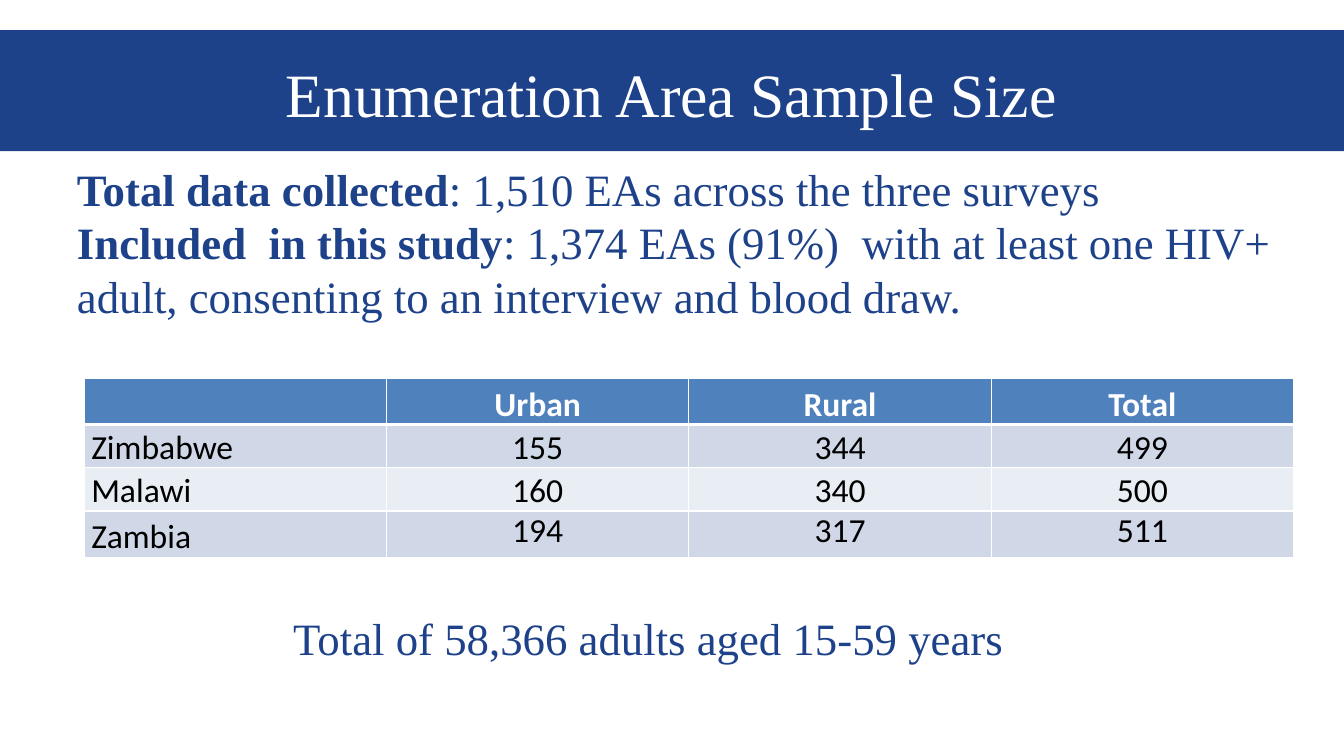
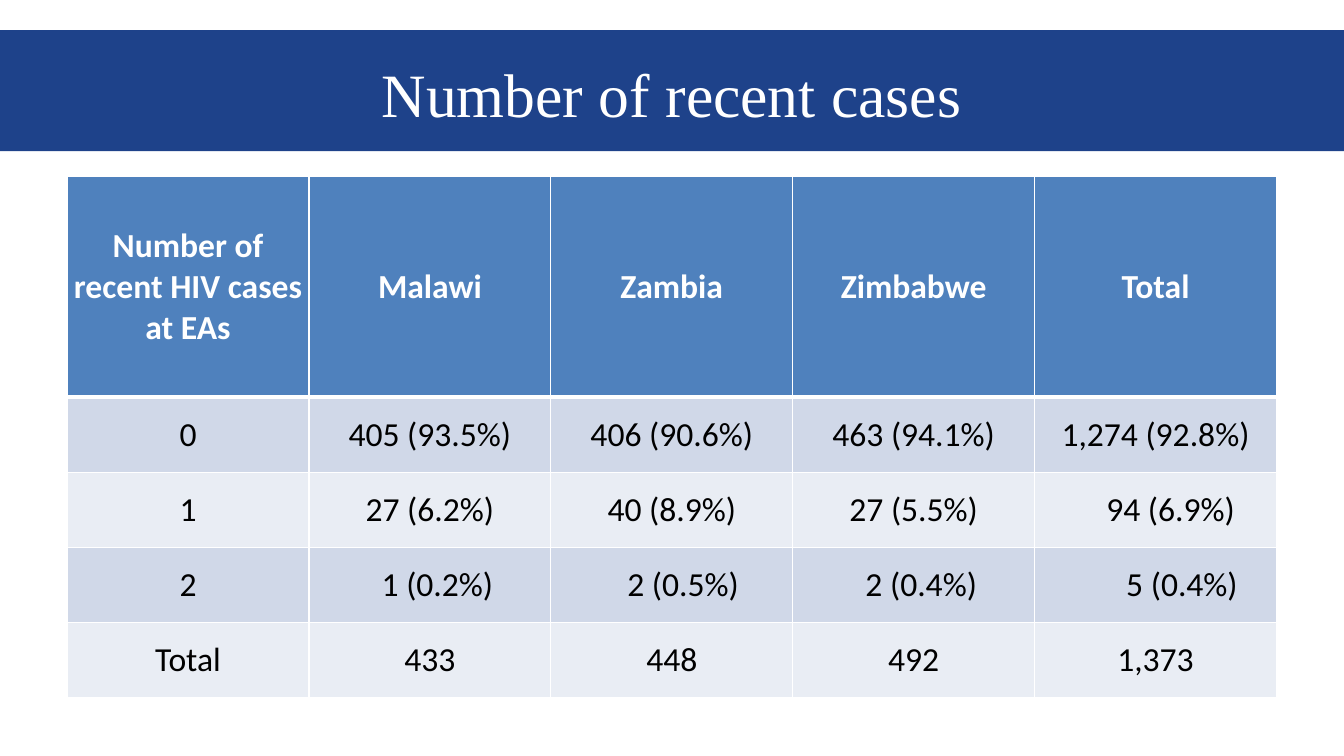
from dataclasses import dataclass

from lxml.etree import SubElement
from pptx import Presentation
from pptx.dml.color import RGBColor
from pptx.enum.shapes import MSO_SHAPE
from pptx.enum.text import MSO_ANCHOR, MSO_AUTO_SIZE, PP_ALIGN
from pptx.oxml.ns import qn
from pptx.util import Cm, Pt


@dataclass(frozen=True)
class Theme:
    """Colours, fonts and type sizes shared by the slides."""

    navy: str = "1E428A"
    white: str = "FFFFFF"
    black: str = "000000"
    header: str = "4F81BD"
    bands: tuple = ("D0D8E8", "E9EDF4")
    serif: str = "Times New Roman"
    sans: str = "Calibri"
    title_size: int = 44
    body_size: int = 32
    table_size: int = 24


@dataclass(frozen=True)
class Box:
    """A region of a slide in centimetres."""

    left: float
    top: float
    width: float
    height: float

    def lengths(self):
        """Return the position and size as lengths."""
        return [Cm(value) for value in (self.left, self.top, self.width, self.height)]


THEME = Theme()
SLIDE_WIDTH, SLIDE_HEIGHT = 33.87, 19.05
BAND = Box(0, 0.76, SLIDE_WIDTH, 3.05)
TITLE = Box(1.69, 0.76, 30.48, 3.18)
SPACE_WIDTH = 0.19


def apply_format(target, **values):
    """Set each named attribute on the target."""
    for name, value in values.items():
        setattr(target, name, value)


def fill_solid(fill, colour):
    """Give a fill one solid colour."""
    fill.solid()
    fill.fore_color.rgb = RGBColor.from_string(colour)


def add_run(paragraph, text, colour, **font_format):
    """Add a formatted run to a paragraph."""
    run = paragraph.add_run()
    run.text = text
    apply_format(run.font, **font_format)
    run.font.color.rgb = RGBColor.from_string(colour)


def add_text(slide, box, paragraphs, colour, font_format, alignment=PP_ALIGN.LEFT, **frame_format):
    """Add a text box whose paragraphs are lists of text and bold pairs."""
    frame = slide.shapes.add_textbox(*box.lengths()).text_frame
    apply_format(frame, word_wrap=True, **frame_format)
    for index, runs in enumerate(paragraphs):
        paragraph = frame.add_paragraph() if index else frame.paragraphs[0]
        paragraph.alignment = alignment
        for text, bold in runs:
            add_run(paragraph, text, colour, bold=bold, **font_format)


def add_body(slide, box, paragraphs):
    """Add navy body text that sizes its box to fit."""
    add_text(slide, box, paragraphs, THEME.navy,
             {"name": THEME.serif, "size": Pt(THEME.body_size)},
             auto_size=MSO_AUTO_SIZE.SHAPE_TO_FIT_TEXT)


def add_titled_slide(presentation, title):
    """Add a blank slide with the navy band and its title."""
    slide = presentation.slides.add_slide(presentation.slide_layouts[6])
    band = slide.shapes.add_shape(MSO_SHAPE.RECTANGLE, *BAND.lengths())
    band.shadow.inherit = False
    fill_solid(band.fill, THEME.navy)
    band.line.fill.background()
    add_text(slide, TITLE, [[(title, False)]], THEME.white,
             {"name": THEME.serif, "size": Pt(THEME.title_size)},
             PP_ALIGN.CENTER, vertical_anchor=MSO_ANCHOR.MIDDLE)
    return slide


def set_borders(cell, widths):
    """Draw white borders of the given widths in points around a cell."""
    properties = cell._tc.get_or_add_tcPr()
    for position, (side, width) in enumerate(widths.items()):
        line = SubElement(properties, qn(f"a:ln{side}"), w=str(Pt(width)))
        fill = SubElement(line, qn("a:solidFill"))
        SubElement(fill, qn("a:srgbClr"), val=THEME.white)
        properties.insert(position, line)


def style_cell(cell, row, text, margins, line_spacing, alignment, anchor):
    """Fill one cell and set its text, margins and borders."""
    is_header = row == 0
    fill_solid(cell.fill, THEME.header if is_header else THEME.bands[(row - 1) % 2])
    apply_format(cell, vertical_anchor=anchor, **margins)
    set_borders(cell, {"L": 1, "R": 1, "T": 3 if row == 1 else 1, "B": 3 if is_header else 1})
    paragraph = cell.text_frame.paragraphs[0]
    apply_format(paragraph, alignment=alignment, line_spacing=line_spacing)
    if text:
        add_run(paragraph, text, THEME.white if is_header else THEME.black,
                name=THEME.sans, size=Pt(THEME.table_size), bold=is_header)


def add_grid(slide, box, rows, header_height, cell_format):
    """Add a banded table with equal columns and equal body rows."""
    column_count = len(rows[0])
    table = slide.shapes.add_table(len(rows), column_count, *box.lengths()).table
    apply_format(table, first_row=False, horz_banding=False)
    for column in table.columns:
        column.width = Cm(box.width / column_count)
    body_height = (box.height - header_height) / (len(rows) - 1)
    for row, texts in enumerate(rows):
        table.rows[row].height = Cm(body_height if row else header_height)
        for column, text in enumerate(texts):
            style_cell(table.cell(row, column), row, text, **cell_format(row, column))


def sample_format(row, column):
    """Return the cell format of the sample size table."""
    is_label = row > 0 and column == 0
    spacings = (1.15, 1.07, 1.07, 1.15 if is_label else 1.0)
    is_top = row == 3 or (is_label and row == 1)
    return {
        "margins": {"margin_left": Cm(0.18), "margin_right": Cm(0.18),
                    "margin_top": 0, "margin_bottom": 0},
        "line_spacing": spacings[row],
        "alignment": PP_ALIGN.LEFT if is_label else PP_ALIGN.CENTER,
        "anchor": MSO_ANCHOR.TOP if is_top else MSO_ANCHOR.MIDDLE,
    }


def cases_format(row, column):
    """Return the cell format of the recent cases table."""
    indents = {(2, 4): 4, (3, 1): 2, (3, 2): 3, (3, 3): 2, (3, 4): 7}
    indent = indents.get((row, column), 0) * SPACE_WIDTH
    return {
        "margins": {"margin_left": Cm(0.02 + indent), "margin_right": Cm(0.02),
                    "margin_top": Cm(0.02), "margin_bottom": 0},
        "line_spacing": 1.0,
        "alignment": PP_ALIGN.CENTER,
        "anchor": MSO_ANCHOR.MIDDLE,
    }


def build_sample_slide(presentation):
    """Build the slide on enumeration area sample size."""
    slide = add_titled_slide(presentation, "Enumeration Area Sample Size")
    rows = [
        ("", "Urban", "Rural", "Total"),
        ("Zimbabwe", "155", "344", "499"),
        ("Malawi", "160", "340", "500"),
        ("Zambia", "194", "317", "511"),
    ]
    add_grid(slide, Box(2.12, 9.53, 30.48, 4.16), rows, 1.04, sample_format)
    add_body(slide, Box(1.69, 3.94, 30.91, 4.37), [
        [("Total data collected", True), (": 1,510 EAs across the three surveys", False)],
        [("Included  in this study", True),
         (": 1,374 EAs (91%)  with at least one HIV+ adult, "
          "consenting to an interview and blood draw.", False)],
    ])
    add_body(slide, Box(7.14, 15.27, 20.45, 1.63),
             [[("Total of 58,366 adults aged 15-59 years", False)]])


def build_cases_slide(presentation):
    """Build the slide on the number of recent cases."""
    slide = add_titled_slide(presentation, "Number of recent cases")
    rows = [
        ("Number of recent HIV cases at EAs", "Malawi", "Zambia", "Zimbabwe", "Total"),
        ("0", "405 (93.5%)", "406 (90.6%)", "463 (94.1%)", "1,274 (92.8%)"),
        ("1", "27 (6.2%)", "40 (8.9%)", "27 (5.5%)", "94 (6.9%)"),
        ("2", "1 (0.2%)", "2 (0.5%)", "2 (0.4%)", "5 (0.4%)"),
        ("Total", "433", "448", "492", "1,373"),
    ]
    add_grid(slide, Box(1.69, 4.45, 30.48, 13.13), rows, 5.56, cases_format)


def main():
    """Build and save the presentation."""
    presentation = Presentation()
    apply_format(presentation, slide_width=Cm(SLIDE_WIDTH), slide_height=Cm(SLIDE_HEIGHT))
    build_sample_slide(presentation)
    build_cases_slide(presentation)
    presentation.save("out.pptx")


if __name__ == "__main__":
    main()
